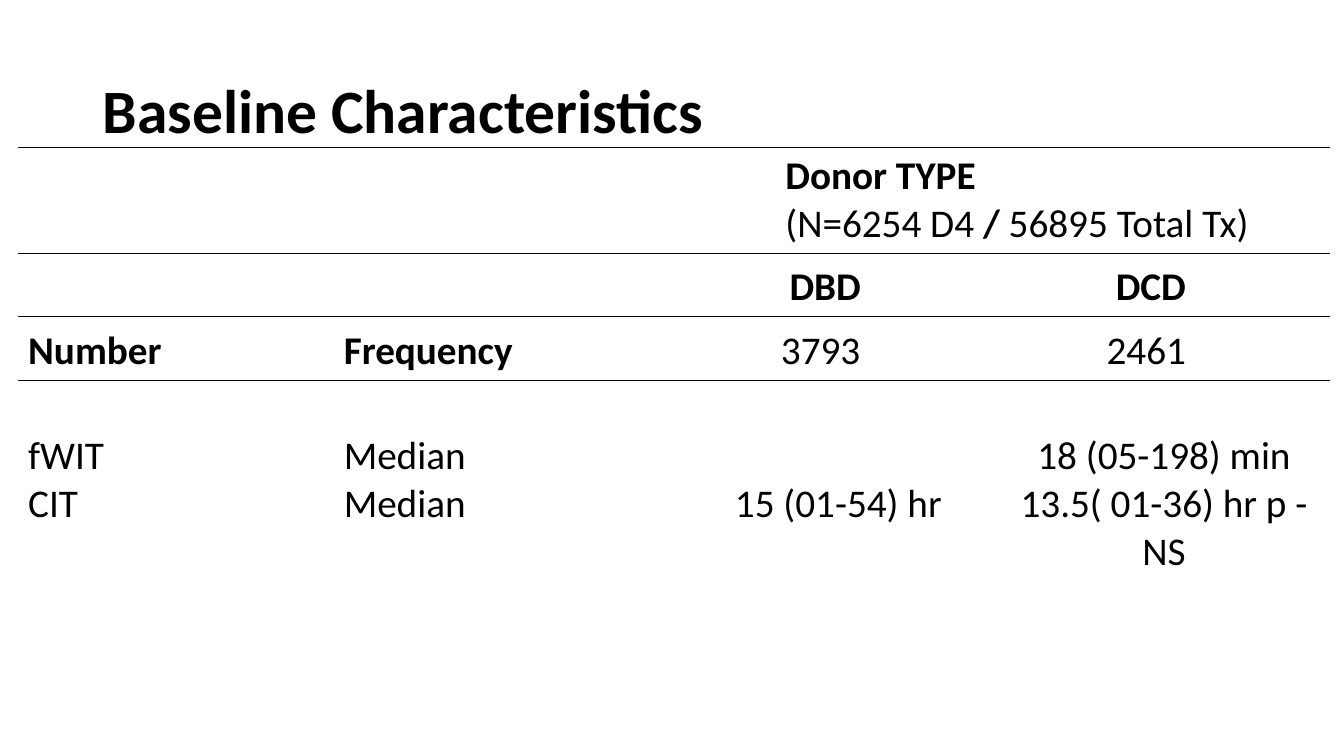
"""Build the Baseline Characteristics slide with its donor type table."""
import lxml.etree
import pptx
import pptx.dml.color
import pptx.enum.text
import pptx.oxml
import pptx.oxml.ns
import pptx.util

Inches = pptx.util.Inches
ALIGN = pptx.enum.text.PP_ALIGN
ANCHOR = pptx.enum.text.MSO_ANCHOR
BLACK = pptx.dml.color.RGBColor(0, 0, 0)
WHITE = pptx.dml.color.RGBColor(255, 255, 255)
FONT = "Calibri"
COLUMN_WIDTHS = [3.13, 3.42, 3.17, 3.29]
ROW_HEIGHTS = [1.05, 0.63, 0.63, 2.01, 0.84, 0.84]
LINE_HEIGHT = 0.47
RULED_ROWS = 4


def add_border(cell, side, visible):
    properties = cell._tc.get_or_add_tcPr()
    border = lxml.etree.SubElement(properties, pptx.oxml.ns.qn(f"a:ln{side}"), w="9525")
    if visible:
        fill = lxml.etree.SubElement(border, pptx.oxml.ns.qn("a:solidFill"))
        lxml.etree.SubElement(fill, pptx.oxml.ns.qn("a:srgbClr"), val=str(BLACK))
    else:
        lxml.etree.SubElement(border, pptx.oxml.ns.qn("a:noFill"))


def format_font(font, size, bold):
    font.name = FONT
    font.size = pptx.util.Pt(size)
    font.bold = bold
    font.color.rgb = BLACK


presentation = pptx.Presentation()
presentation.slide_width = Inches(13.33)
presentation.slide_height = Inches(7.5)
slide = presentation.slides.add_slide(presentation.slide_layouts[5])

title = slide.shapes.title
title.left, title.top = Inches(0.92), Inches(0.4)
title.width, title.height = Inches(11.5), Inches(1.45)
title.text_frame.text = "Baseline Characteristics"
title.text_frame.vertical_anchor = ANCHOR.MIDDLE
heading = title.text_frame.paragraphs[0]
heading.alignment = ALIGN.LEFT
heading.line_spacing = 0.9
format_font(heading.font, 44, True)

table = slide.shapes.add_table(
    len(ROW_HEIGHTS), len(COLUMN_WIDTHS),
    Inches(0.18), Inches(1.46), Inches(sum(COLUMN_WIDTHS)), Inches(sum(ROW_HEIGHTS)),
).table
table.first_row = False
table.horz_banding = False
for column, width in zip(table.columns, COLUMN_WIDTHS):
    column.width = Inches(width)
for row_index, (row, height) in enumerate(zip(table.rows, ROW_HEIGHTS)):
    row.height = Inches(height)
    for cell in row.cells:
        add_border(cell, "L", False)
        add_border(cell, "R", False)
        add_border(cell, "T", row_index < RULED_ROWS)
        add_border(cell, "B", row_index < RULED_ROWS - 1)
        cell.fill.solid()
        cell.fill.fore_color.rgb = WHITE

donor_cell = table.cell(0, 2)
donor_cell.merge(table.cell(0, 3))
donor_cell.vertical_anchor = ANCHOR.BOTTOM
donor_cell.margin_left = Inches(1.06)
donor_lines = [
    [("Donor TYPE", True)],
    [("(N=6254 D4 ", False), ("/ ", True), ("56895 Total Tx)", False)],
]
donor_cell.text = "\n".join("" for line in donor_lines)
for paragraph, line in zip(donor_cell.text_frame.paragraphs, donor_lines):
    for text, bold in line:
        run = paragraph.add_run()
        run.text = text
        format_font(run.font, 28, bold)

# row, column, text, bold, right margin, lines left free above
entries = [
    (1, 2, "DBD", True, 0.36, 0),
    (1, 3, "DCD", True, 0.36, 0),
    (2, 0, "Number", True, 0.1, 0),
    (2, 1, "Frequency", True, 0.1, 0),
    (2, 2, "3793", False, 0.45, 0),
    (2, 3, "2461", False, 0.45, 0),
    (3, 0, "fWIT\nCIT", False, 0.1, 1),
    (3, 1, "Median\nMedian", False, 0.1, 1),
    (3, 2, "15 (01-54) hr", False, 0.1, 2),
    (3, 3, "18 (05-198) min\n13.5( 01-36) hr p - NS", False, 0.1, 1),
]
for row_index, column_index, text, bold, right_margin, free_lines in entries:
    cell = table.cell(row_index, column_index)
    cell.text = text
    cell.margin_right = Inches(right_margin)
    cell.margin_top = Inches(0.05 + free_lines * LINE_HEIGHT)
    cell.vertical_anchor = ANCHOR.TOP if row_index == 3 else ANCHOR.BOTTOM
    for paragraph in cell.text_frame.paragraphs:
        paragraph.alignment = ALIGN.CENTER if column_index >= 2 else ALIGN.LEFT
        format_font(paragraph.font, 28, bold)

presentation.save("out.pptx")
